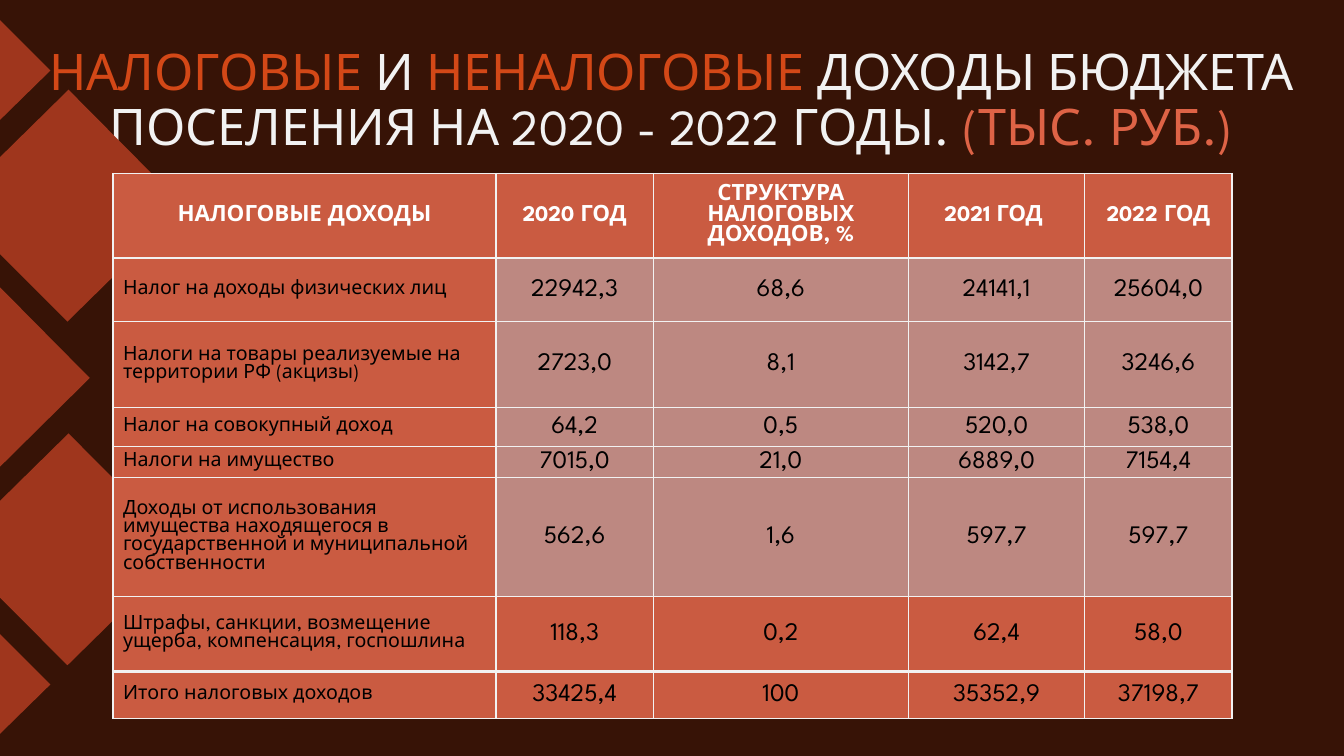
from dataclasses import dataclass

from lxml import etree
from pptx import Presentation
from pptx.dml.color import RGBColor
from pptx.enum.text import MSO_ANCHOR, PP_ALIGN
from pptx.oxml.ns import qn
from pptx.util import Inches, Pt

LEFT, CENTER = PP_ALIGN.LEFT, PP_ALIGN.CENTER
MIDDLE = MSO_ANCHOR.MIDDLE


@dataclass(frozen=True)
class Theme:
    font: str = "League Spartan"
    back: str = "371306"
    rust: str = "9F361D"
    orange: str = "D34817"
    coral: str = "DE6346"
    light: str = "F2F2F2"
    white: str = "FFFFFF"
    black: str = "000000"
    brick: str = "CA5B41"
    rose: str = "BD8881"
    title: int = 36
    head: int = 16
    label: int = 14
    value: int = 18
    thin: float = 1
    thick: float = 2.25


THEME = Theme()

TITLE = [
    ("НАЛОГОВЫЕ", THEME.orange),
    (" И ", THEME.light),
    ("НЕНАЛОГОВЫЕ", THEME.orange),
    (" ДОХОДЫ БЮДЖЕТА ПОСЕЛЕНИЯ НА 2020 - 2022 ГОДЫ. ", THEME.light),
    ("(ТЫС. РУБ.)", THEME.coral),
]

ROWS = [
    ("НАЛОГОВЫЕ ДОХОДЫ", "2020 ГОД", "СТРУКТУРА НАЛОГОВЫХ ДОХОДОВ, %",
     "2021 ГОД ", "2022 ГОД"),
    ("Налог на доходы физических лиц", "22942,3", "68,6", "24141,1", "25604,0"),
    ("Налоги на товары реализуемые на территории РФ (акцизы)",
     "2723,0", "8,1", "3142,7", "3246,6"),
    ("Налог на совокупный доход", "64,2", "0,5", "520,0", "538,0"),
    ("Налоги на имущество", "7015,0", "21,0", "6889,0", "7154,4"),
    ("Доходы от использования имущества находящегося в государственной "
     "и муниципальной собственности", "562,6", "1,6", "597,7", "597,7"),
    ("Штрафы, санкции, возмещение ущерба, компенсация, госпошлина",
     "118,3", "0,2", "62,4", "58,0"),
    ("Итого налоговых доходов ", "33425,4", "100", "35352,9", "37198,7"),
]
WIDTHS = [3.8, 1.56, 2.53, 1.75, 1.46]
HEIGHTS = [0.84, 0.63, 0.85, 0.39, 0.31, 1.18, 0.74, 0.47]

# Edge diamonds, cut off by the left side of the slide
LARGE = [(0, 1.56), (0, 2.52), (0.67, 3.19), (1.83, 2.05), (0.68, 0.89)]
SMALL = [(0, 0.2), (0, 1.19), (0.5, 0.7)]
WEDGE = [(0, 2.85), (0, 4.63), (0.89, 3.75)]
DIAMONDS = [(WEDGE, 0), (LARGE, 3.41), (LARGE, 0), (SMALL, 0), (SMALL, 6.09)]


def add_text(para, text, size, color, bold=False, align=LEFT):
    para.alignment = align
    run = para.add_run()
    run.text = text
    font = run.font
    font.name, font.size, font.bold = THEME.font, Pt(size), bold
    font.color.rgb = RGBColor.from_string(color)


def add_shard(slide, points, drop):
    spots = [(Inches(x), Inches(y + drop)) for x, y in points]
    form = slide.shapes.build_freeform(*spots[0])
    form.add_line_segments(spots[1:], close=True)
    shard = form.convert_to_shape()
    shard.shadow.inherit = False
    shard.fill.solid()
    shard.fill.fore_color.rgb = RGBColor.from_string(THEME.rust)
    shard.line.fill.background()


def add_title(slide):
    title = slide.shapes.title
    title.left, title.top = Inches(0.21), Inches(0.27)
    title.width, title.height = Inches(12.9), Inches(1.48)
    frame = title.text_frame
    frame.word_wrap, frame.vertical_anchor = True, MIDDLE
    para = frame.paragraphs[0]
    para.line_spacing = 0.9
    for text, color in TITLE:
        add_text(para, text, THEME.title, color, align=CENTER)


def set_edges(cell, row, col):
    # Heavy rules: under the header, above the total, right of the labels
    last = len(ROWS) - 1
    heavy = {"lnL": col == 1, "lnR": col == 0,
             "lnT": row in (1, last), "lnB": row in (0, last - 1)}
    props = cell._tc.get_or_add_tcPr()
    for spot, (side, thick) in enumerate(heavy.items()):
        line = etree.Element(qn("a:" + side))
        line.set("w", str(Pt(THEME.thick if thick else THEME.thin)))
        fill = etree.SubElement(line, qn("a:solidFill"))
        etree.SubElement(fill, qn("a:srgbClr")).set("val", THEME.light)
        props.insert(spot, line)


def fill_cell(cell, text, row, col):
    para = cell.text_frame.paragraphs[0]
    cell.vertical_anchor = MIDDLE
    if row == 0:
        add_text(para, text, THEME.head, THEME.white, bold=True, align=CENTER)
    elif col == 0:
        add_text(para, text, THEME.label, THEME.black)
    else:
        add_text(para, text, THEME.value, THEME.black, align=CENTER)
        cell.margin_left = cell.margin_right = cell.margin_top = Inches(0.01)
        cell.margin_bottom = 0
    body = col > 0 and 0 < row < len(ROWS) - 2
    cell.fill.solid()
    cell.fill.fore_color.rgb = RGBColor.from_string(
        THEME.rose if body else THEME.brick)
    set_edges(cell, row, col)


def add_grid(slide):
    table = slide.shapes.add_table(
        len(ROWS), len(WIDTHS), Inches(1.12), Inches(1.72),
        Inches(sum(WIDTHS)), Inches(sum(HEIGHTS))).table
    for col, width in enumerate(WIDTHS):
        table.columns[col].width = Inches(width)
    for row, texts in enumerate(ROWS):
        table.rows[row].height = Inches(HEIGHTS[row])
        for col, text in enumerate(texts):
            fill_cell(table.cell(row, col), text, row, col)


def main():
    deck = Presentation()
    deck.slide_width, deck.slide_height = Inches(13.33), Inches(7.5)
    slide = deck.slides.add_slide(deck.slide_layouts[5])

    # Backdrop
    back = slide.background.fill
    back.solid()
    back.fore_color.rgb = RGBColor.from_string(THEME.back)
    for points, drop in DIAMONDS:
        add_shard(slide, points, drop)

    # Content
    add_title(slide)
    add_grid(slide)
    deck.save("out.pptx")


if __name__ == "__main__":
    main()
